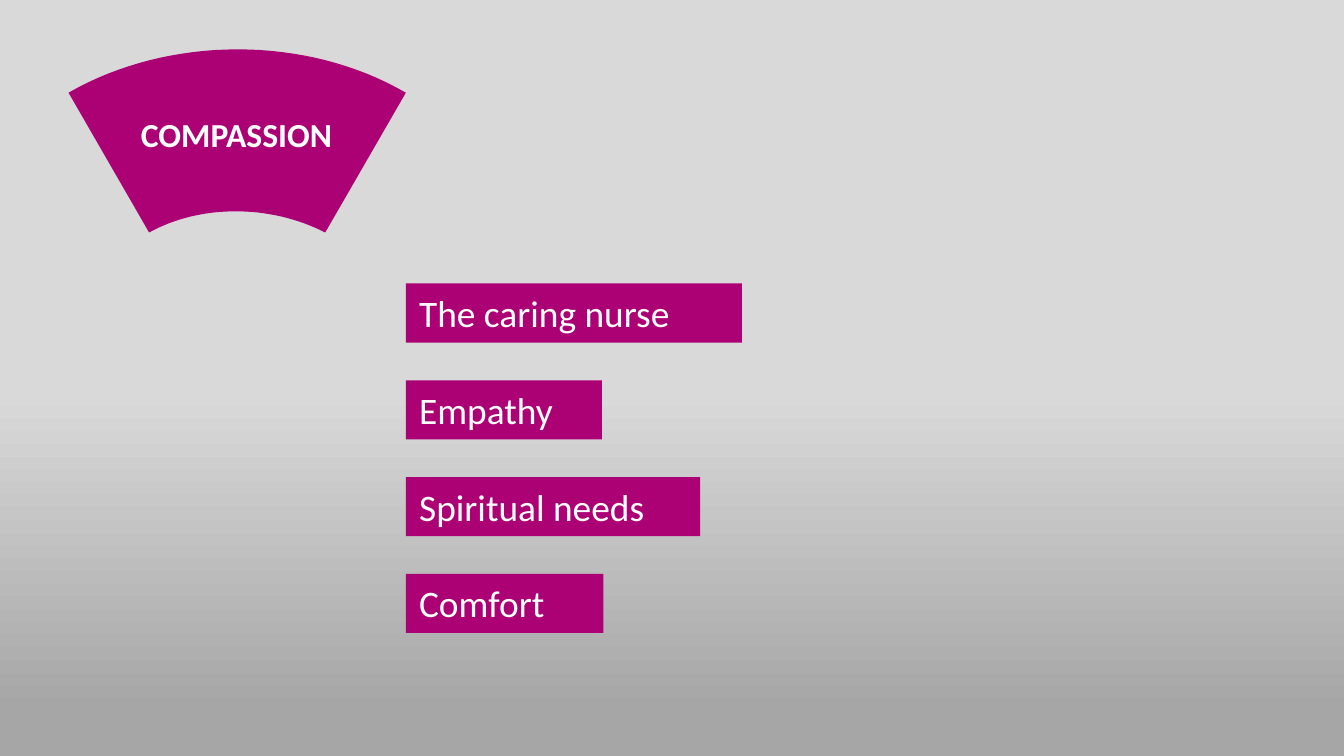
from lxml import etree
from pptx import Presentation
from pptx import util as u
from pptx.dml.color import RGBColor
from pptx.enum import text
from pptx.oxml.ns import qn

SCALE = 9144  # EMU per px, 100 px to the inch
SLIDE_WIDTH = 1000
MAGENTA = RGBColor(0xAC, 0x00, 0x75)
WHITE = RGBColor(0xFF, 0xFF, 0xFF)
LIGHT_GRAY = RGBColor(0xD9, 0xD9, 0xD9)
DARK_GRAY = RGBColor(0xA6, 0xA6, 0xA6)
FONT = "Calibri"


def px(value):
    return u.Emu(round(value * SCALE))


def curve_points(start, control_1, control_2, end, steps=32):
    """Points along a cubic curve, in EMU."""
    points = []
    for step in range(steps + 1):
        t = step / steps
        weights = ((1 - t) ** 3, 3 * t * (1 - t) ** 2, 3 * t * t * (1 - t), t ** 3)
        corners = (start, control_1, control_2, end)
        points.append(tuple(
            px(sum(w * corner[axis] for w, corner in zip(weights, corners)))
            for axis in (0, 1)))
    return points


def paint_background(slide):
    fill = slide.background.fill
    fill.gradient()
    fill.gradient_angle = 270  # light at the top, dark at the bottom
    stop_list = slide.element.find(".//" + qn("a:gsLst"))
    for stop in list(stop_list):
        stop_list.remove(stop)
    stops = ((0, LIGHT_GRAY), (52, LIGHT_GRAY), (94, DARK_GRAY), (100, DARK_GRAY))
    for percent, color in stops:
        stop = etree.SubElement(stop_list, qn("a:gs"), pos=str(percent * 1000))
        etree.SubElement(stop, qn("a:srgbClr"), val=str(color))


def add_label(shapes, box, wording, size, bold=False, align=text.PP_ALIGN.LEFT):
    label = shapes.add_textbox(*map(px, box))
    label.fill.solid()
    label.fill.fore_color.rgb = MAGENTA
    frame = label.text_frame
    frame.word_wrap = True
    paragraph = frame.paragraphs[0]
    paragraph.alignment = align
    run = paragraph.add_run()
    run.text = wording
    run.font.name = FONT
    run.font.size = u.Pt(size)
    run.font.bold = bold
    run.font.color.rgb = WHITE
    return label


def add_fan(slide, left, top):
    """Fan-shaped segment with its heading, grouped."""
    group = slide.shapes.add_group_shape()

    # Outer arc from left to right, then inner arc back
    outline = (curve_points((0, 32), (75, -11), (177, -11), (251, 32))
               + curve_points((191, 136), (150, 115), (98, 115), (60, 136)))
    builder = group.shapes.build_freeform(*outline[0])
    builder.add_line_segments(outline[1:], close=True)
    fan = builder.convert_to_shape(px(left), px(top))
    fan.shadow.inherit = False
    fan.fill.solid()
    fan.fill.fore_color.rgb = MAGENTA
    fan.line.fill.background()

    # Heading
    add_label(group.shapes, (left + 26, top + 43, 198, 30), "COMPASSION", 18,
              bold=True, align=text.PP_ALIGN.CENTER)


def add_topics(slide, left, top, topics):
    """Column of evenly spaced bars, each as wide as given."""
    height, pitch = 44, 72
    for row, (wording, width) in enumerate(topics):
        bar = add_label(slide.shapes, (left, top + row * pitch, width, height),
                        wording, 20)
        bar.text_frame.auto_size = text.MSO_AUTO_SIZE.SHAPE_TO_FIT_TEXT


def main():
    presentation = Presentation()
    presentation.slide_width = px(SLIDE_WIDTH)
    presentation.slide_height = px(SLIDE_WIDTH * 9 / 16)
    slide = presentation.slides.add_slide(presentation.slide_layouts[6])

    paint_background(slide)
    add_fan(slide, 51, 37)
    add_topics(slide, 302, 211, (
        ("The caring nurse", 250),
        ("Empathy", 146),
        ("Spiritual needs", 219),
        ("Comfort", 147),
    ))
    presentation.save("out.pptx")


if __name__ == "__main__":
    main()
